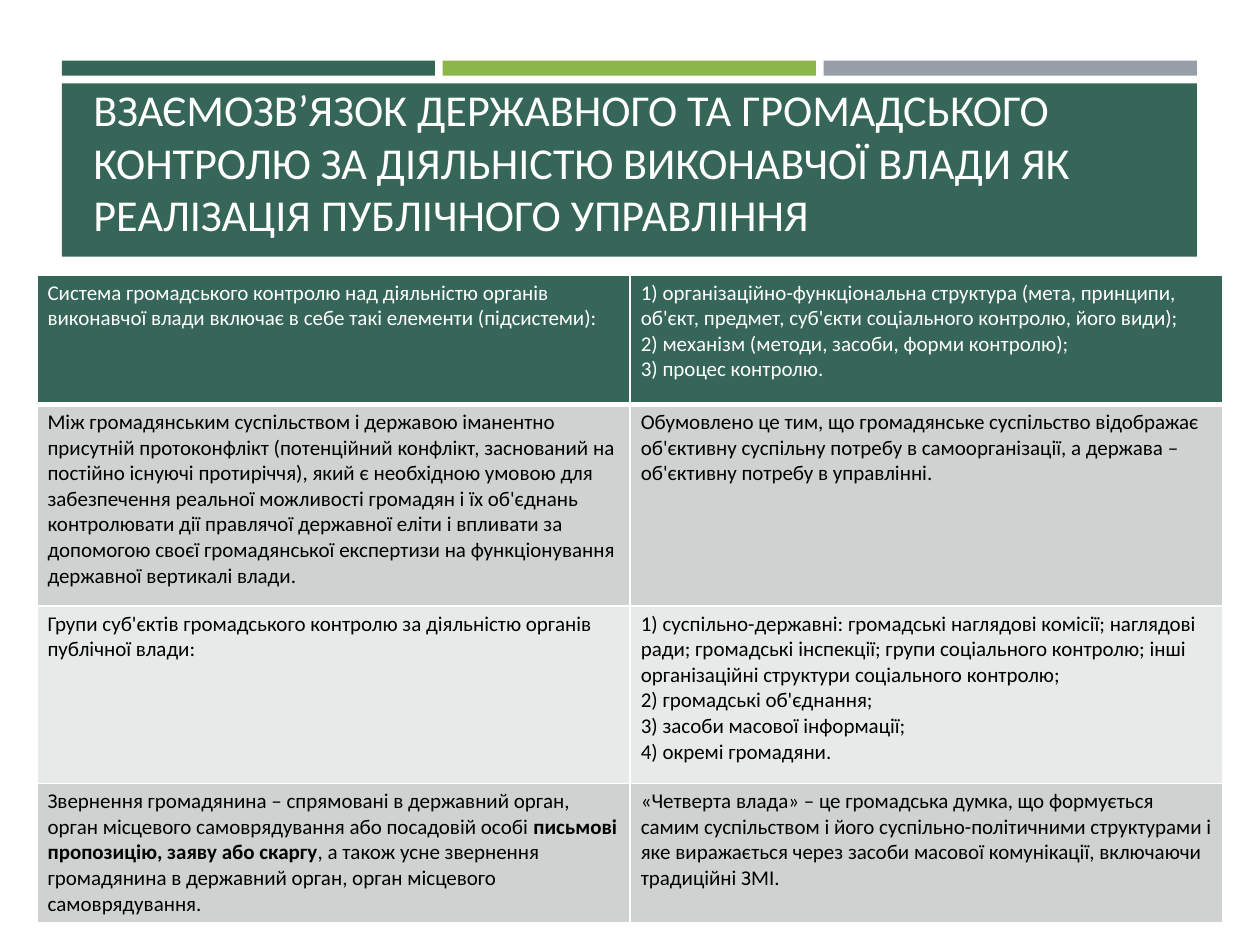
import pptx
import pptx.util
import pptx.oxml
import pptx.dml.color
import pptx.enum.shapes
import pptx.enum.text
from pptx.oxml.ns import qn

Pt = pptx.util.Pt
FONT = "Calibri"
HEX = {
    "green": "366658", "lime": "8CB64A", "gray": "969FA7",
    "white": "FFFFFF", "black": "000000", "dark": "CED3D1", "light": "E8EAEA",
}

TITLE = ("ВЗАЄМОЗВ’ЯЗОК ДЕРЖАВНОГО ТА ГРОМАДСЬКОГО КОНТРОЛЮ ЗА ДІЯЛЬНІСТЮ "
         "ВИКОНАВЧОЇ ВЛАДИ ЯК РЕАЛІЗАЦІЯ ПУБЛІЧНОГО УПРАВЛІННЯ")

# Each cell is a list of paragraphs; text between * marks is bold.
ROWS = [
    (["Система громадського контролю над діяльністю органів виконавчої влади "
      "включає в себе такі елементи (підсистеми):"],
     ["1) організаційно-функціональна структура (мета, принципи, об'єкт, предмет, "
      "суб'єкти соціального контролю, його види);",
      "2) механізм (методи, засоби, форми контролю);",
      "3) процес контролю."]),
    (["Між громадянським суспільством і державою іманентно присутній протоконфлікт "
      "(потенційний конфлікт, заснований на постійно існуючі протиріччя), який є "
      "необхідною умовою для забезпечення реальної можливості громадян і їх об'єднань "
      "контролювати дії правлячої державної еліти і впливати за допомогою своєї "
      "громадянської експертизи на функціонування державної вертикалі влади."],
     ["Обумовлено це тим, що громадянське суспільство відображає об'єктивну суспільну "
      "потребу в самоорганізації, а держава – об'єктивну потребу в управлінні."]),
    (["Групи суб'єктів громадського контролю за діяльністю органів публічної влади:"],
     ["1) суспільно-державні: громадські наглядові комісії; наглядові ради; громадські "
      "інспекції; групи соціального контролю; інші організаційні структури "
      "соціального контролю;",
      "2) громадські об'єднання;",
      "3) засоби масової інформації;",
      "4) окремі громадяни."]),
    (["Звернення громадянина – спрямовані в державний орган, орган місцевого "
      "самоврядування або посадовій особі *письмові пропозицію, заяву або скаргу*, "
      "а також усне звернення громадянина в державний орган, орган місцевого "
      "самоврядування."],
     ["«Четверта влада» – це громадська думка, що формується самим суспільством і його "
      "суспільно-політичними структурами і яке виражається через засоби масової "
      "комунікації, включаючи традиційні ЗМІ."]),
]
HEIGHTS = [74, 115.2, 101.5, 77]
FILLS = ["green", "dark", "light", "dark"]


def color(name):
    return pptx.dml.color.RGBColor.from_string(HEX[name])


def style(run, size, name, bold=False):
    run.font.name = FONT
    run.font.size = Pt(size)
    run.font.bold = bold
    run.font.color.rgb = color(name)


def add_rect(slide, x, y, w, h, name):
    rect = slide.shapes.add_shape(
        pptx.enum.shapes.MSO_SHAPE.RECTANGLE, Pt(x), Pt(y), Pt(w), Pt(h))
    rect.shadow.inherit = False
    rect.fill.solid()
    rect.fill.fore_color.rgb = color(name)
    rect.line.fill.background()


def add_header(slide, x, y, w, h):
    """Three thin bars above a panel that holds the title."""
    gap, thin, top = 4.4, 8.6, 13
    wide = (w - 2 * gap) / 3
    for i, name in enumerate(["green", "lime", "gray"]):
        add_rect(slide, x + i * (wide + gap), y, wide, thin, name)
    add_rect(slide, x, y + top, w, h - top, "green")

    title = slide.shapes.title
    title.element.getparent().append(title.element)  # bring to front
    title.left, title.top = Pt(x + 10.8), Pt(y + 21.6)
    title.width, title.height = Pt(w - 19.6), Pt(85)
    frame = title.text_frame
    frame.text = TITLE
    frame.word_wrap = True
    frame.auto_size = pptx.enum.text.MSO_AUTO_SIZE.NONE
    frame.vertical_anchor = pptx.enum.text.MSO_ANCHOR.BOTTOM
    para = frame.paragraphs[0]
    para.alignment = pptx.enum.text.PP_ALIGN.LEFT
    style(para.runs[0], 25.2, "white")


def set_edges(cell, top, bottom):
    """White cell borders; call before the fill, which must follow them."""
    props = cell._tc.get_or_add_tcPr()
    for side, width in zip("LRTB", (1, 1, top, bottom)):
        line = pptx.oxml.parse_xml(
            '<a:ln%s xmlns:a="http://schemas.openxmlformats.org/drawingml/2006/main"'
            ' w="%d"><a:solidFill><a:srgbClr val="%s"/></a:solidFill></a:ln%s>'
            % (side, Pt(width), HEX["white"], side))
        props.append(line)


def fill_cell(cell, paras, ink):
    cell.margin_left = cell.margin_right = Pt(6.2)
    cell.margin_top = cell.margin_bottom = Pt(3.1)
    frame = cell.text_frame
    for i, text in enumerate(paras):
        para = frame.paragraphs[0] if i == 0 else frame.add_paragraph()
        for j, part in enumerate(text.split("*")):
            run = para.add_run()
            run.text = part
            style(run, 12, ink, bold=j % 2 == 1)


def add_grid(slide, x, y, w):
    frame = slide.shapes.add_table(
        len(ROWS), 2, Pt(x), Pt(y), Pt(w), Pt(sum(HEIGHTS)))
    table = frame.table
    for col in table.columns:
        col.width = Pt(w / 2)
    for r, row in enumerate(ROWS):
        table.rows[r].height = Pt(HEIGHTS[r])
        for c, paras in enumerate(row):
            cell = table.cell(r, c)
            fill_cell(cell, paras, "white" if r == 0 else "black")
            set_edges(cell, 3 if r == 1 else 1, 3 if r == 0 else 1)
            cell.fill.solid()
            cell.fill.fore_color.rgb = color(FILLS[r])


def main():
    deck = pptx.Presentation()
    deck.slide_width, deck.slide_height = Pt(720), Pt(540)
    slide = deck.slides.add_slide(deck.slide_layouts.get_by_name("Title Only"))
    add_header(slide, 35.3, 34.6, 648.7, 112)
    add_grid(slide, 21, 157, 678)
    deck.save("out.pptx")


if __name__ == "__main__":
    main()
